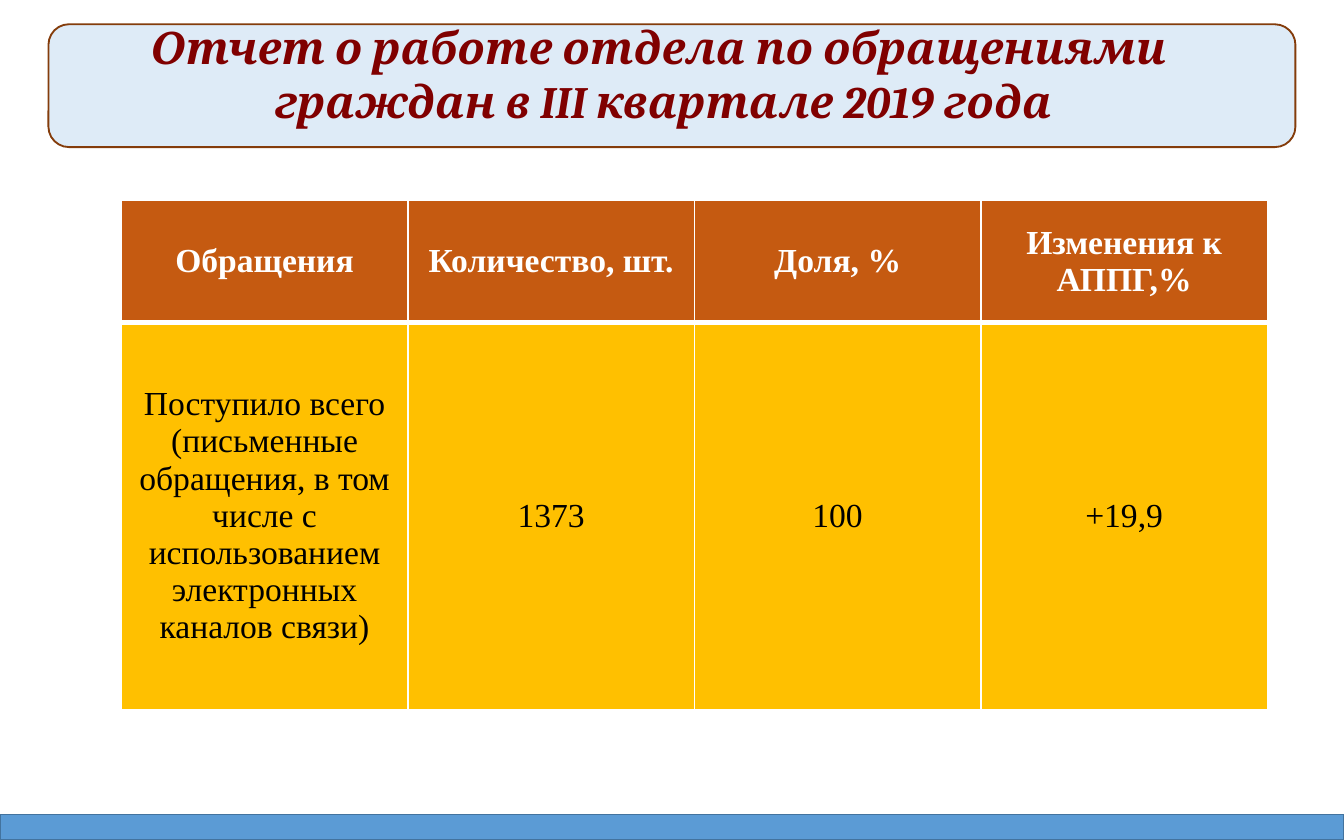
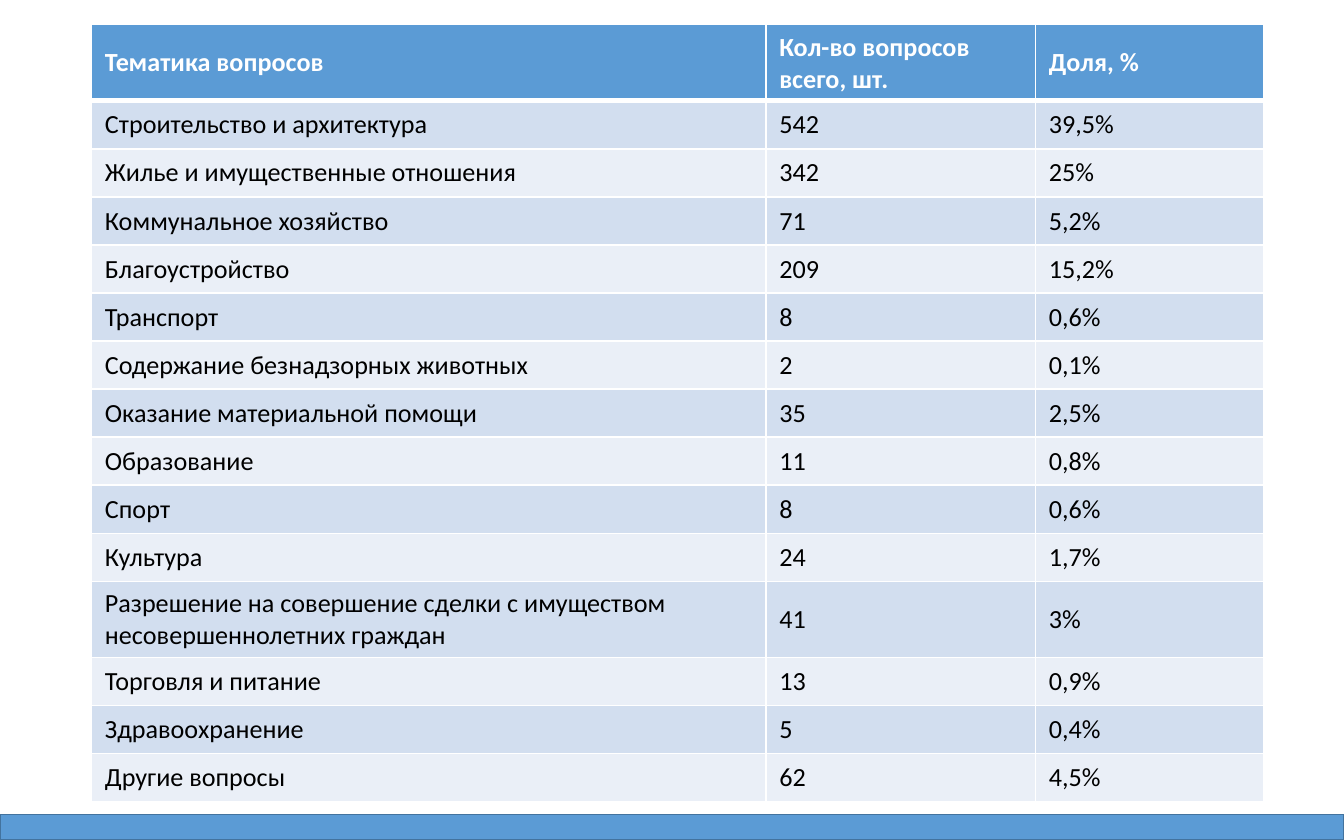
"""Build a two-slide report on citizens' appeals in the third quarter of 2019."""
from dataclasses import dataclass

from lxml import etree
from pptx import Presentation
from pptx import util as u
from pptx.dml.color import RGBColor
from pptx.enum import shapes, text
from pptx.oxml import ns
from pptx.slide import Slide
from pptx.table import _Cell

Pt = u.Pt
COLOURS = {
    "white": "FFFFFF",
    "black": "000000",
    "blue": "5B9BD5",
    "blue_line": "43739E",
    "blue_band": "D2DEEF",
    "pale_band": "EAEFF7",
    "title_fill": "DEEBF7",
    "title_line": "843C0B",
    "title_text": "800000",
    "orange": "C55A11",
    "amber": "FFC000",
}
SLIDE_WIDTH, SLIDE_HEIGHT = 720, 450
FOOTER_HEIGHT = 13.6
THIN, THICK = 1, 3


@dataclass(frozen=True)
class Box:
    left: float
    top: float
    width: float
    height: float

    def lengths(self) -> tuple[u.Length, ...]:
        return Pt(self.left), Pt(self.top), Pt(self.width), Pt(self.height)


@dataclass(frozen=True)
class Panel:
    kind: shapes.MSO_SHAPE
    box: Box
    fill: str
    line: str


@dataclass(frozen=True)
class TableStyle:
    font: str
    size: float
    alignment: text.PP_ALIGN
    header_fill: str
    body_fills: tuple[str, ...]


@dataclass(frozen=True)
class TableData:
    left: float
    top: float
    columns: tuple[float, ...]
    row_heights: tuple[float, ...]
    rows: tuple[tuple[str, ...], ...]
    style: TableStyle


FOOTER = Panel(
    shapes.MSO_SHAPE.RECTANGLE,
    Box(0, SLIDE_HEIGHT - FOOTER_HEIGHT, SLIDE_WIDTH, FOOTER_HEIGHT),
    "blue", "blue_line",
)
TITLE_PANEL = Panel(
    shapes.MSO_SHAPE.ROUNDED_RECTANGLE, Box(26, 13, 668, 65.8),
    "title_fill", "title_line",
)
TITLE_BOX = Box(36.7, 13, 637.2, 52.6)
TITLE_LINES = (
    "Отчет о работе отдела по обращениями ",
    "граждан в III квартале 2019 года",
)

SUMMARY = TableData(
    left=65, top=107.4, columns=(153.5,) * 4, row_heights=(65.3, 207.4),
    rows=(
        ("Обращения", "Количество, шт.", "Доля, %", "Изменения к АППГ,%"),
        ("Поступило всего (письменные обращения, в том числе с использованием "
         "электронных каналов связи)", "1373", "100", "+19,9"),
    ),
    style=TableStyle("Times New Roman", 18, text.PP_ALIGN.CENTER,
                     "orange", ("amber",)),
)

TOPIC_ROWS = (
    ("Тематика вопросов", "Кол-во вопросов всего, шт.", "Доля, %"),
    ("Строительство и архитектура", "542", "39,5%"),
    ("Жилье и имущественные отношения", "342", "25%"),
    ("Коммунальное хозяйство", "71", "5,2%"),
    ("Благоустройство", "209", "15,2%"),
    ("Транспорт", "8", "0,6%"),
    ("Содержание безнадзорных животных", "2", "0,1%"),
    ("Оказание материальной помощи", "35", "2,5%"),
    ("Образование", "11", "0,8%"),
    ("Спорт", "8", "0,6%"),
    ("Культура", "24", "1,7%"),
    ("Разрешение на совершение сделки с имуществом несовершеннолетних граждан",
     "41", "3%"),
    ("Торговля и питание", "13", "0,9%"),
    ("Здравоохранение", "5", "0,4%"),
    ("Другие вопросы", "62", "4,5%"),
)
TWO_LINE_ROWS = (0, 11)
TOPICS = TableData(
    left=49, top=13.2, columns=(361.3, 144.4, 122.2),
    row_heights=tuple(40.5 if index in TWO_LINE_ROWS else 25.75
                      for index in range(len(TOPIC_ROWS))),
    rows=TOPIC_ROWS,
    style=TableStyle("Calibri", 14, text.PP_ALIGN.LEFT,
                     "blue", ("blue_band", "pale_band")),
)


def colour(name: str) -> RGBColor:
    return RGBColor.from_string(COLOURS[name])


def add_panel(slide: Slide, panel: Panel) -> None:
    shape = slide.shapes.add_shape(panel.kind, *panel.box.lengths())
    shape.shadow.inherit = False
    shape.fill.solid()
    shape.fill.fore_color.rgb = colour(panel.fill)
    shape.line.color.rgb = colour(panel.line)
    shape.line.width = Pt(1)


def add_title(slide: Slide) -> None:
    add_panel(slide, TITLE_PANEL)
    frame = slide.shapes.add_textbox(*TITLE_BOX.lengths()).text_frame
    frame.word_wrap = False
    frame.vertical_anchor = text.MSO_ANCHOR.MIDDLE
    frame.text = "\n".join(TITLE_LINES)
    for paragraph in frame.paragraphs:
        paragraph.alignment = text.PP_ALIGN.CENTER
        font = paragraph.font
        font.name, font.size = "Cambria", Pt(24)
        font.bold = font.italic = True
        font.color.rgb = colour("title_text")


def set_borders(cell: _Cell, top: float, bottom: float) -> None:
    properties = cell._tc.get_or_add_tcPr()
    widths = {"lnL": THIN, "lnR": THIN, "lnT": top, "lnB": bottom}
    for position, (tag, width) in enumerate(widths.items()):
        line = etree.Element(ns.qn(f"a:{tag}"), w=str(Pt(width)))
        fill = etree.SubElement(line, ns.qn("a:solidFill"))
        etree.SubElement(fill, ns.qn("a:srgbClr"), val=COLOURS["white"])
        properties.insert(position, line)


def fill_cell(cell: _Cell, words: str, row: int, style: TableStyle) -> None:
    is_header = row == 0
    fills = style.body_fills
    cell.text = words
    cell.vertical_anchor = text.MSO_ANCHOR.MIDDLE
    cell.fill.solid()
    cell.fill.fore_color.rgb = colour(
        style.header_fill if is_header else fills[(row - 1) % len(fills)])
    paragraph = cell.text_frame.paragraphs[0]
    paragraph.alignment = style.alignment
    font = paragraph.font
    font.name, font.size, font.bold = style.font, Pt(style.size), is_header
    font.color.rgb = colour("white" if is_header else "black")
    set_borders(cell, top=THICK if row == 1 else THIN,
                bottom=THICK if is_header else THIN)


def add_data_table(slide: Slide, data: TableData) -> None:
    box = Box(data.left, data.top, sum(data.columns), sum(data.row_heights))
    table = slide.shapes.add_table(
        len(data.rows), len(data.columns), *box.lengths()).table
    for column, width in zip(table.columns, data.columns):
        column.width = Pt(width)
    for row, height in zip(table.rows, data.row_heights):
        row.height = Pt(height)
    for row_index, row_words in enumerate(data.rows):
        for column_index, words in enumerate(row_words):
            fill_cell(table.cell(row_index, column_index), words,
                      row_index, data.style)


def main() -> None:
    presentation = Presentation()
    presentation.slide_width = Pt(SLIDE_WIDTH)
    presentation.slide_height = Pt(SLIDE_HEIGHT)
    for data, has_title in ((SUMMARY, True), (TOPICS, False)):
        slide = presentation.slides.add_slide(presentation.slide_layouts[6])
        add_data_table(slide, data)
        if has_title:
            add_title(slide)
        add_panel(slide, FOOTER)
    presentation.save("out.pptx")


if __name__ == "__main__":
    main()
